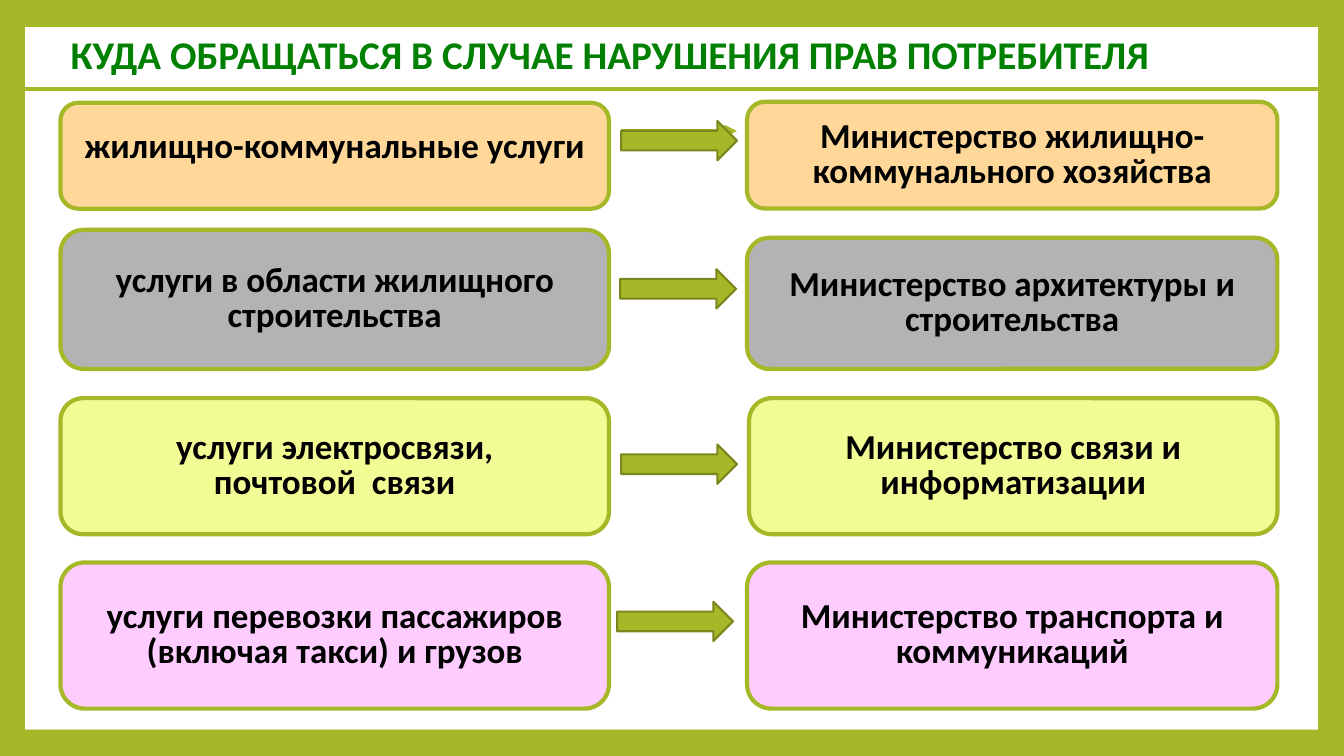
from collections import namedtuple
from dataclasses import dataclass

from lxml import etree
from pptx import Presentation
from pptx.dml.color import RGBColor
from pptx.enum.shapes import MSO_CONNECTOR, MSO_SHAPE
from pptx.enum.text import MSO_ANCHOR, MSO_AUTO_SIZE, PP_ALIGN
from pptx.oxml.ns import qn
from pptx.util import Inches, Pt

RECTANGLE = MSO_SHAPE.RECTANGLE
ROUNDED = MSO_SHAPE.ROUNDED_RECTANGLE
RIGHT_ARROW = MSO_SHAPE.RIGHT_ARROW
STRAIGHT = MSO_CONNECTOR.STRAIGHT
TOP, MIDDLE = MSO_ANCHOR.TOP, MSO_ANCHOR.MIDDLE
LEFT, CENTER = PP_ALIGN.LEFT, PP_ALIGN.CENTER
FIT_SHAPE = MSO_AUTO_SIZE.SHAPE_TO_FIT_TEXT

WIDTH, HEIGHT = 13.33, 7.5

Box = namedtuple("Box", "left top width height")
# arrow_left and arrow_drop are measured from the row's own box;
# authority_drop is how far the right card starts below the row's top.
Row = namedtuple("Row", "top height fill service authority "
                        "arrow_left arrow_drop authority_drop authority_inset spacing")


@dataclass(frozen=True)
class Theme:
    font: str = "Calibri"
    green: str = "A6B727"
    arrow_edge: str = "7B871D"
    white: str = "FFFFFF"
    title: str = "008000"
    text: str = "000000"
    title_size: float = 28
    card_size: float = 25
    line: float = 3
    arrow_line: float = 1.5


THEME = Theme()

PANEL = Box(0.25, 0.27, WIDTH - 0.51, HEIGHT - 0.53)
BOTTOM_BAND = Box(0, PANEL.top + PANEL.height, WIDTH, 0.27)
TITLE = Box(0.6, 0.25, 12.3, 0.57)
RULE = Box(0.21, 0.88, 12.96, 0)
CARDS_LEFT, CARDS_WIDTH = 0.6, 12.07
SERVICE_WIDTH = 5.44
AUTHORITY_WIDTH = 5.26
ARROW_WIDTH, ARROW_HEIGHT = 1.15, 0.39

ROWS = [
    Row(1.02, 1.05, "FFD899", ["жилищно-коммунальные услуги"],
        ["Министерство жилищно-", "коммунального хозяйства"],
        5.56, 0.18, -0.01, 0, 14),
    Row(2.28, 1.38, "B3B3B5", ["услуги в области жилищного", "строительства"],
        ["Министерство архитектуры и", "строительства"],
        5.55, 0.39, 0.08, 0, 25),
    Row(3.95, 1.35, "F2FC94", ["услуги электросвязи,", "почтовой  связи"],
        ["Министерство связи и", "информатизации"],
        5.56, 0.46, 0, 0.02, 25),
    Row(5.58, 1.45, "FFCCFF", ["услуги перевозки пассажиров", "(включая такси) и грузов"],
        ["Министерство транспорта и", "коммуникаций"],
        5.52, 0.39, 0, 0, 25),
]


def color(value):
    return RGBColor.from_string(value)


def add_filled(slide, kind, box, fill, edge=None, edge_width=None):
    shape = slide.shapes.add_shape(kind, *map(Inches, box))
    shape.shadow.inherit = False
    shape.fill.solid()
    shape.fill.fore_color.rgb = color(fill)
    if edge:
        shape.line.color.rgb = color(edge)
        shape.line.width = Pt(edge_width)
    else:
        shape.line.fill.background()
    return shape


def add_line(slide, box, arrow=False):
    left, top, width, height = box
    line = slide.shapes.add_connector(
        STRAIGHT, *map(Inches, (left, top, left + width, top + height)))
    line.line.color.rgb = color(THEME.green)
    line.line.width = Pt(THEME.line)
    properties = line.element.spPr
    if arrow:
        etree.SubElement(properties.find(qn("a:ln")), qn("a:tailEnd"), type="triangle")
    etree.SubElement(properties, qn("a:effectLst"))


def add_run(paragraph, text, size, fill):
    run = paragraph.add_run()
    run.text = text
    run.font.name = THEME.font
    run.font.size = Pt(size)
    run.font.bold = True
    run.font.color.rgb = color(fill)


def add_card(slide, box, fill, lines, spacing=25):
    card = add_filled(slide, ROUNDED, box, fill, THEME.green, THEME.line)
    frame = card.text_frame
    frame.word_wrap = True
    frame.vertical_anchor = MIDDLE
    for index, text in enumerate(lines):
        paragraph = frame.add_paragraph() if index else frame.paragraphs[0]
        paragraph.alignment = CENTER
        paragraph.line_spacing = Pt(spacing)
        add_run(paragraph, text, THEME.card_size, THEME.text)


def add_frame(slide):
    """Green background with the white panel behind everything else."""
    slide.background.fill.solid()
    slide.background.fill.fore_color.rgb = color(THEME.green)
    for box, fill in ((PANEL, THEME.white), (BOTTOM_BAND, THEME.green)):
        part = add_filled(slide, RECTANGLE, box, fill)
        slide.shapes.title.element.addprevious(part.element)


def add_heading(slide, box, text):
    title = slide.shapes.title
    title.left, title.top, title.width, title.height = map(Inches, box)
    frame = title.text_frame
    frame.word_wrap = True
    frame.auto_size = FIT_SHAPE
    frame.vertical_anchor = TOP
    paragraph = frame.paragraphs[0]
    paragraph.alignment = LEFT
    add_run(paragraph, text, THEME.title_size, THEME.title)
    add_line(slide, RULE)


def add_row(slide, box, row):
    """Service card, arrow and responsible ministry inside the row's box."""
    arrow = Box(box.left + row.arrow_left, box.top + row.arrow_drop,
                ARROW_WIDTH, ARROW_HEIGHT)
    add_filled(slide, RIGHT_ARROW, arrow, THEME.green, THEME.arrow_edge, THEME.arrow_line)
    add_card(slide, box._replace(width=SERVICE_WIDTH), row.fill, row.service, row.spacing)
    width = AUTHORITY_WIDTH - row.authority_inset
    authority = Box(box.left + box.width - width, box.top + row.authority_drop,
                    width, box.height - row.authority_drop)
    add_card(slide, authority, row.fill, row.authority)


def main():
    presentation = Presentation()
    presentation.slide_width, presentation.slide_height = Inches(WIDTH), Inches(HEIGHT)
    slide = presentation.slides.add_slide(presentation.slide_layouts.get_by_name("Title Only"))
    add_frame(slide)
    add_heading(slide, TITLE, "КУДА ОБРАЩАТЬСЯ В СЛУЧАЕ НАРУШЕНИЯ ПРАВ ПОТРЕБИТЕЛЯ")
    first = ROWS[0]
    add_line(slide, Box(CARDS_LEFT + first.arrow_left, first.top + 0.28, ARROW_WIDTH, 0),
             arrow=True)
    for row in ROWS:
        add_row(slide, Box(CARDS_LEFT, row.top, CARDS_WIDTH, row.height), row)
    presentation.save("out.pptx")


if __name__ == "__main__":
    main()
